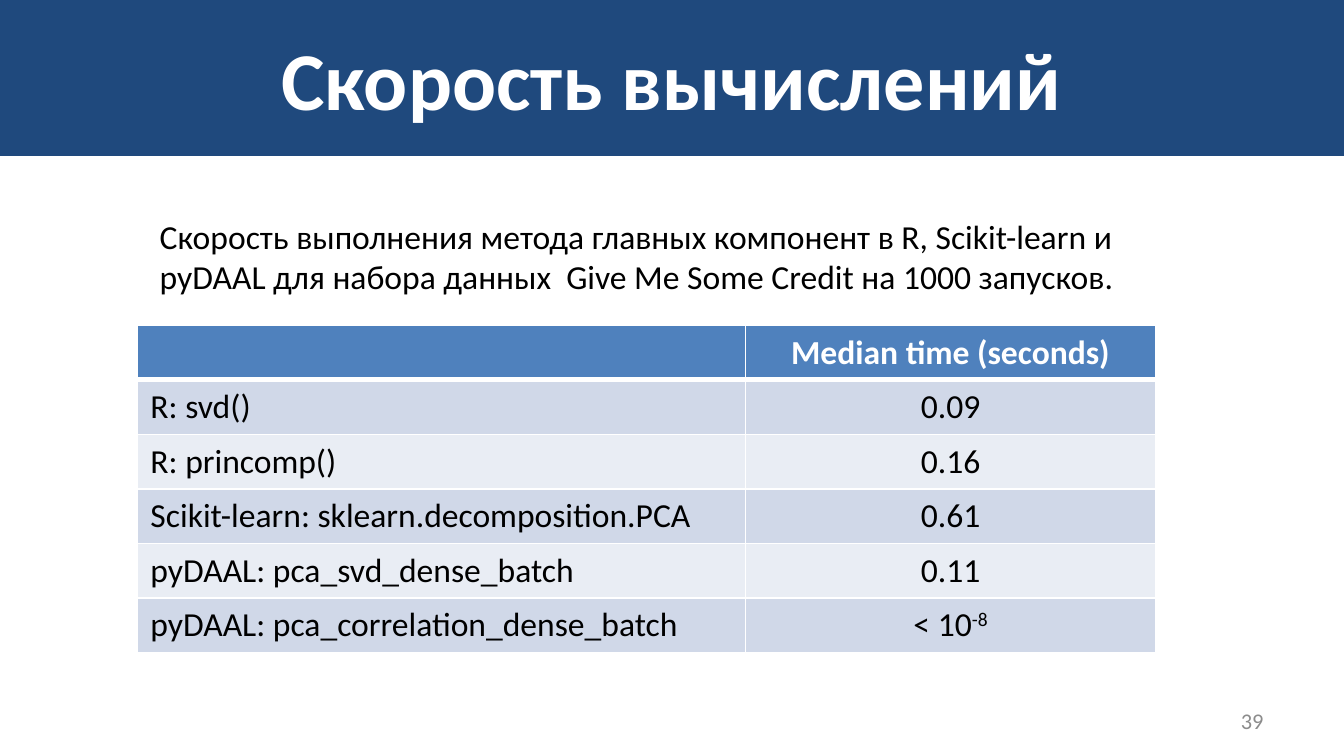
import pptx
import pptx.dml.color
import pptx.enum.shapes
import pptx.enum.text
import pptx.oxml
import pptx.oxml.ns
import pptx.util
from pptx.util import Cm

RGBColor = pptx.dml.color.RGBColor
PP_ALIGN = pptx.enum.text.PP_ALIGN
MSO_ANCHOR = pptx.enum.text.MSO_ANCHOR

NAVY = RGBColor(0x1F, 0x49, 0x7D)
BLUE = RGBColor(0x4F, 0x81, 0xBD)
BAND_DARK = RGBColor(0xD0, 0xD8, 0xE8)
BAND_LIGHT = RGBColor(0xE9, 0xED, 0xF4)
WHITE = RGBColor(0xFF, 0xFF, 0xFF)
BLACK = RGBColor(0x00, 0x00, 0x00)
GRAY = RGBColor(0x8C, 0x8C, 0x8C)

FONT = "Calibri"
TABLE_HEADER = ("", "Median time (seconds)")
TIMINGS = (
    ("R: svd()", "0.09", ""),
    ("R: princomp()", "0.16", ""),
    ("Scikit-learn: sklearn.decomposition.PCA", "0.61", ""),
    ("pyDAAL: pca_svd_dense_batch", "0.11", ""),
    ("pyDAAL: pca_correlation_dense_batch", "< 10", "-8"),
)


def write_text(frame, text, superscript="", size=18, color=BLACK, bold=False,
               align=PP_ALIGN.LEFT, anchor=MSO_ANCHOR.TOP):
    frame.word_wrap = True
    frame.vertical_anchor = anchor
    paragraph = frame.paragraphs[0]
    paragraph.alignment = align
    for content, baseline in ((text, 0), (superscript, 30000)):
        if not content:
            continue
        run = paragraph.add_run()
        run.text = content
        run.font.name = FONT
        run.font.size = pptx.util.Pt(size)
        run.font.bold = bold
        run.font.color.rgb = color
        if baseline:
            run._r.get_or_add_rPr().set("baseline", str(baseline))


def set_cell_borders(cell, bottom, top):
    """Draw white borders; top and bottom widths are in points."""
    properties = cell._tc.get_or_add_tcPr()
    widths = {"lnL": 1, "lnR": 1, "lnT": top, "lnB": bottom}
    for position, (side, width) in enumerate(widths.items()):
        line = pptx.oxml.parse_xml(
            f'<a:{side} {pptx.oxml.ns.nsdecls("a")} w="{pptx.util.Pt(width)}">'
            f'<a:solidFill><a:srgbClr val="{WHITE}"/></a:solidFill></a:{side}>')
        properties.insert(position, line)


def add_title_band(slide, left, top, width, height):
    band = slide.shapes.add_shape(
        pptx.enum.shapes.MSO_SHAPE.RECTANGLE, left, top, width, height)
    band.shadow.inherit = False
    band.fill.solid()
    band.fill.fore_color.rgb = NAVY
    band.line.fill.background()
    write_text(band.text_frame, "Скорость вычислений", size=44, color=WHITE,
               bold=True, align=PP_ALIGN.CENTER, anchor=MSO_ANCHOR.MIDDLE)


def add_text(slide, left, top, width, height, text, **text_format):
    box = slide.shapes.add_textbox(left, top, width, height)
    write_text(box.text_frame, text, **text_format)


def add_timing_table(slide, left, top, width, height):
    row_count = len(TIMINGS) + 1
    table = slide.shapes.add_table(row_count, 2, left, top, width, height).table
    table.columns[0].width = Cm(11.5)
    table.columns[1].width = width - Cm(11.5)

    for column, heading in enumerate(TABLE_HEADER):
        write_text(table.cell(0, column).text_frame, heading, color=WHITE,
                   bold=True, align=PP_ALIGN.CENTER)
    for row, (method, seconds, exponent) in enumerate(TIMINGS, start=1):
        write_text(table.cell(row, 0).text_frame, method)
        write_text(table.cell(row, 1).text_frame, seconds, exponent,
                   align=PP_ALIGN.CENTER)

    for row in range(row_count):
        band_color = BAND_DARK if row % 2 else BAND_LIGHT
        for cell in table.rows[row].cells:
            cell.fill.solid()
            cell.fill.fore_color.rgb = band_color if row else BLUE
            set_cell_borders(cell, bottom=1 if row else 3,
                             top=3 if row == 1 else 1)


def main():
    presentation = pptx.Presentation()
    presentation.slide_width = Cm(25.4)
    presentation.slide_height = Cm(14.29)
    slide = presentation.slides.add_slide(presentation.slide_layouts[6])

    add_title_band(slide, 0, 0, presentation.slide_width, Cm(2.95))
    add_text(slide, Cm(18.2), Cm(13.24), Cm(5.93), Cm(0.76), "39", size=12,
             color=GRAY, align=PP_ALIGN.RIGHT, anchor=MSO_ANCHOR.MIDDLE)
    add_timing_table(slide, Cm(2.59), Cm(6.15), Cm(19.25), Cm(6.18))
    add_text(slide, Cm(2.77), Cm(3.96), Cm(20.04), Cm(1.8),
             "Скорость выполнения метода главных компонент в R, Scikit-learn и "
             "pyDAAL для набора данных  Give Me Some Credit на 1000 запусков.")

    presentation.save("out.pptx")


if __name__ == "__main__":
    main()
